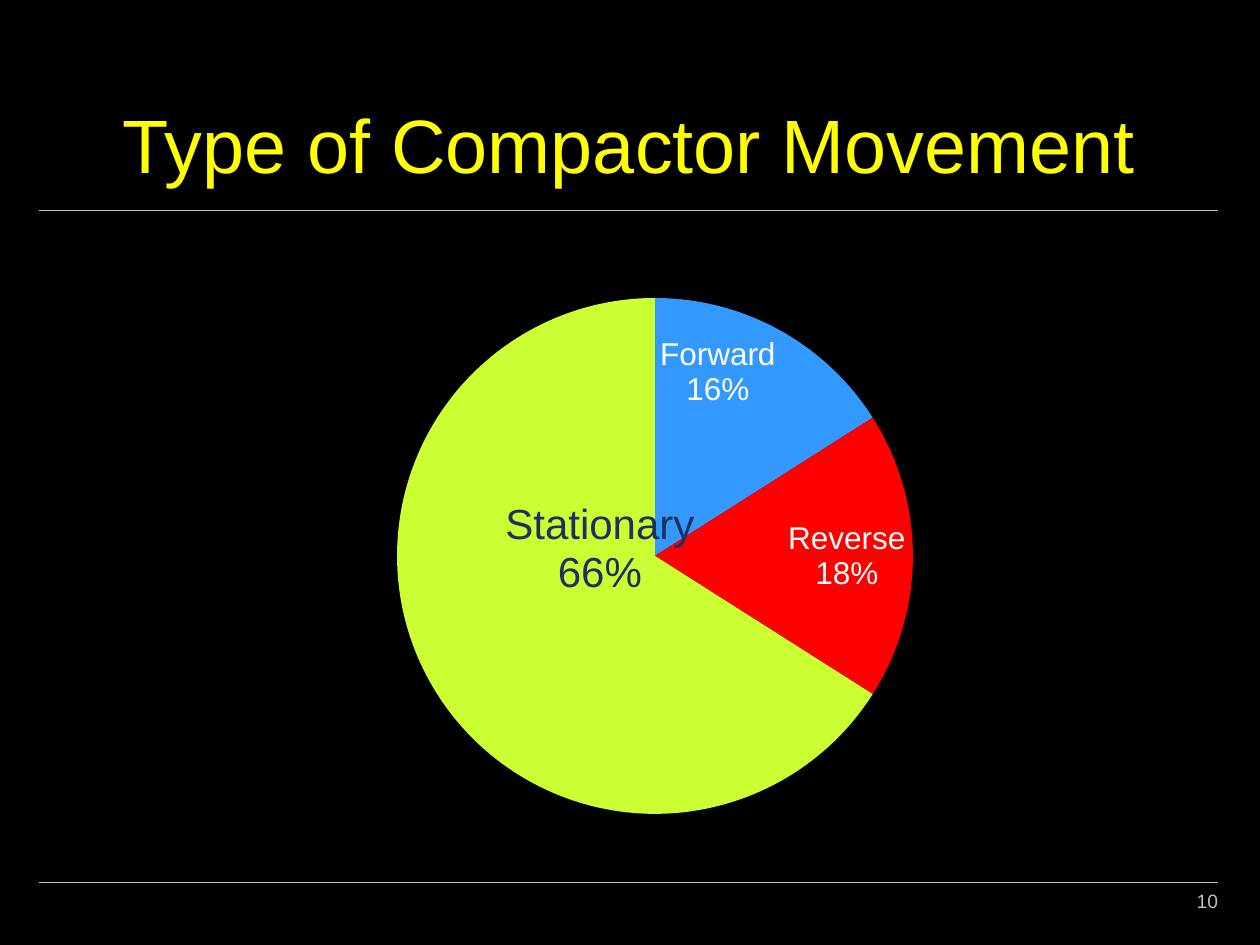
from dataclasses import dataclass

from lxml.etree import SubElement
from pptx import Presentation
from pptx.chart.data import CategoryChartData
from pptx.dml.color import RGBColor
from pptx.enum.chart import XL_CHART_TYPE, XL_LABEL_POSITION
from pptx.enum.shapes import MSO_CONNECTOR
from pptx.enum.text import MSO_ANCHOR, PP_ALIGN
from pptx.oxml import parse_xml
from pptx.oxml.ns import nsdecls, qn
from pptx.util import Emu, Pt


@dataclass(frozen=True)
class Theme:
    font: str = "Arial"
    background: str = "000000"
    title: str = "FFFF00"
    muted: str = "BFBFBF"
    label: str = "FFFFFF"
    dark_label: str = "1F3060"
    slices: tuple = ("3399FF", "FF0000", "CCFF33")
    title_size: float = 43.2
    label_size: int = 18
    large_label_size: int = 24
    number_size: int = 11
    rule_width: float = 0.25


THEME = Theme()
EMU_PER_PX = 914400 / 126


def px(length):
    return Emu(round(length * EMU_PER_PX))


def color(value):
    return RGBColor.from_string(value)


def style_font(font, size, value):
    font.name = THEME.font
    font.size = Pt(size)
    font.color.rgb = color(value)


def add_text(page, box, text, size, value, align, anchor, side_inset):
    shape = page.shapes.add_textbox(*map(px, box))
    frame = shape.text_frame
    frame.word_wrap = True
    frame.vertical_anchor = anchor
    frame.margin_left = frame.margin_right = px(side_inset)
    para = frame.paragraphs[0]
    para.text = text
    para.alignment = align
    style_font(para.font, size, value)


def add_rule(page, left, top, width):
    rule = page.shapes.add_connector(
        MSO_CONNECTOR.STRAIGHT, px(left), px(top), px(left + width), px(top))
    rule.line.color.rgb = color(THEME.muted)
    rule.line.width = Pt(THEME.rule_width)
    SubElement(rule._element.spPr, qn("a:effectLst"))


def add_header(page, box):
    left, top, width, height = box
    add_text(page, (left + 49, top, 1082, 180), "Type of Compactor Movement",
             THEME.title_size, THEME.title, PP_ALIGN.CENTER, MSO_ANCHOR.BOTTOM, 13)
    add_rule(page, left, top + height, width)


def add_footer(page, box):
    left, top, width, height = box
    add_rule(page, left, top, width)
    add_text(page, (left + width - 105, top - 6, 105, height), "10",
             THEME.number_size, THEME.muted, PP_ALIGN.RIGHT, MSO_ANCHOR.MIDDLE, 0)


def manual_layout(**values):
    """Build a chart layout element from tag names and their values."""
    parts = "".join(f'<c:{tag} val="{value}"/>' for tag, value in values.items())
    return parse_xml(f'<c:layout {nsdecls("c")}><c:manualLayout>{parts}'
                     '</c:manualLayout></c:layout>')


def show_name_and_percent(labels):
    """Show category over percentage in a dLbl or dLbls element."""
    shown = ("showCatName", "showPercent")
    for tag in ("showLegendKey", "showVal", "showCatName", "showSerName",
                "showPercent", "showBubbleSize"):
        flag = labels.find(qn(f"c:{tag}"))
        flag.set("val", "1" if tag in shown else "0")
    flag.addnext(parse_xml(f'<c:separator {nsdecls("c")}>\n</c:separator>'))


def add_movement_pie(page, box):
    width, height = box[2:]
    data = CategoryChartData(number_format="0")
    data.categories = ["Forward", "Reverse", "Stationary"]
    data.add_series("Series 1", (16, 18, 66))
    chart = page.shapes.add_chart(XL_CHART_TYPE.PIE, *map(px, box), data).chart
    chart.has_legend = False
    chart.has_title = False
    style_font(chart.font, THEME.label_size, THEME.label)

    plot = chart.plots[0]
    plot.vary_by_categories = True
    plot_area = plot._element.getparent()
    for old_layout in plot_area.findall(qn("c:layout")):
        plot_area.remove(old_layout)
    plot_area.insert(0, manual_layout(
        layoutTarget="inner", xMode="edge", yMode="edge",
        x=round(311 / width, 4), y=round(78 / height, 4),
        w=round(516 / width, 4), h=round(516 / height, 4)))

    series = plot.series[0]
    for index, value in enumerate(THEME.slices):
        slice_format = series.points[index].format
        slice_format.fill.solid()
        slice_format.fill.fore_color.rgb = color(value)
        slice_format.line.fill.background()

    labels = series.data_labels
    labels.number_format = "0%"
    labels.number_format_is_linked = False
    labels.position = XL_LABEL_POSITION.INSIDE_END
    style_font(labels.font, THEME.label_size, THEME.label)
    show_name_and_percent(labels._element)

    stationary = series.points[2].data_label
    style_font(stationary.font, THEME.large_label_size, THEME.dark_label)
    stationary.position = XL_LABEL_POSITION.CENTER
    label = labels._element.find(qn("c:dLbl"))
    show_name_and_percent(label)
    label.find(qn("c:idx")).addnext(manual_layout(
        x=round(58 / width, 4), y=round(-69 / height, 4)))


def main():
    deck = Presentation()
    deck.slide_width, deck.slide_height = px(1260), px(945)
    page = deck.slides.add_slide(deck.slide_layouts[6])
    page.background.fill.solid()
    page.background.fill.fore_color.rgb = color(THEME.background)
    add_header(page, (39, 15, 1179, 195))
    add_movement_pie(page, (86, 220, 1086, 639))
    add_footer(page, (39, 882, 1179, 50))
    deck.save("out.pptx")


if __name__ == "__main__":
    main()
